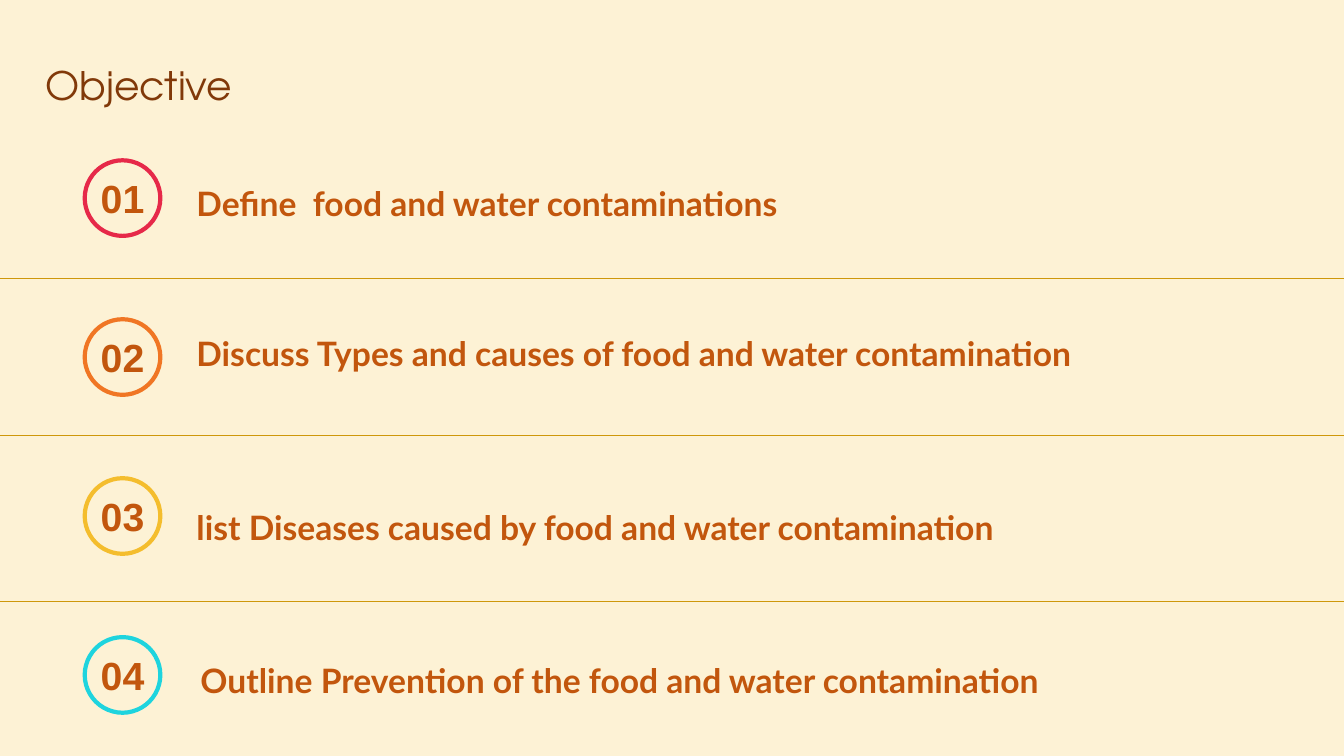
from pptx import Presentation
from pptx.dml.color import RGBColor
from pptx.enum.shapes import MSO_CONNECTOR, MSO_SHAPE
from pptx.enum.text import MSO_ANCHOR, PP_ALIGN
from pptx.oxml.ns import qn
from pptx.util import Inches, Pt
from lxml import etree

OVAL = MSO_SHAPE.OVAL
STRAIGHT = MSO_CONNECTOR.STRAIGHT
MIDDLE = MSO_ANCHOR.MIDDLE
LEFT, CENTER = PP_ALIGN.LEFT, PP_ALIGN.CENTER

# Content
TITLE = "Objective"
# Objective, ring colour, text left, text top, text width
OBJECTIVES = [
    ("Define  food and water contaminations", "E62949", 1.85, 1.77, 6.1),
    ("Discuss Types and causes of food and water contamination", "F07624", 1.85, 3.25, 9.52),
    ("list Diseases caused by food and water contamination", "F4BD2D", 1.85, 4.98, 8.31),
    ("Outline Prevention of the food and water contamination", "1ED4DE", 1.89, 6.5, 9.16),
]
DIVIDERS = [2.76, 4.32, 5.97]

BACKGROUND, TITLE_BROWN, TEXT_ORANGE, DIVIDER_GOLD = "FDF2D5", "813909", "C2560D", "CE980B"
SLIDE_W, SLIDE_H = 13.33, 7.5
RING_LEFT, RING_TOP, RING_SIZE, RING_STEP = 0.84, 1.59, 0.75, 1.577
TEXT_H = 0.5


def color(hex_string):
    return RGBColor.from_string(hex_string)


def write(shape, text, font="Lato", size=24, fill=TEXT_ORANGE, bold=True,
          align=LEFT, anchor=None, wrap=True, inset=None):
    tf = shape.text_frame
    tf.word_wrap = wrap
    if anchor is not None:
        tf.vertical_anchor = anchor
    if inset is not None:
        tf.margin_left = tf.margin_right = tf.margin_top = tf.margin_bottom = Inches(inset)
    p = tf.paragraphs[0]
    p.alignment = align
    r = p.add_run()
    r.text = text
    r.font.name, r.font.size, r.font.bold = font, Pt(size), bold
    r.font.color.rgb = color(fill)


prs = Presentation()
prs.slide_width, prs.slide_height = Inches(SLIDE_W), Inches(SLIDE_H)
s = prs.slides.add_slide(prs.slide_layouts[5])
s.background.fill.solid()
s.background.fill.fore_color.rgb = color(BACKGROUND)

# Title
title = s.shapes.title
title.left, title.top = Inches(0.35), Inches(0.45)
title.width, title.height = Inches(12.66), Inches(0.79)
write(title, TITLE, font="TeX Gyre Adventor", size=28, fill=TITLE_BROWN, bold=False, anchor=MIDDLE)

# Numbered rings with their objectives
for i, (objective, ring_color, left, top, width) in enumerate(OBJECTIVES):
    ring = s.shapes.add_shape(OVAL, Inches(RING_LEFT), Inches(RING_TOP + i * RING_STEP),
                              Inches(RING_SIZE), Inches(RING_SIZE))
    ring.shadow.inherit = False
    ring.fill.background()
    ring.line.color.rgb = color(ring_color)
    ring.line.width = Pt(3)
    write(ring, f"{i + 1:02d}", font="Arial", size=28, align=CENTER,
          anchor=MIDDLE, wrap=False, inset=0)
    box = s.shapes.add_textbox(Inches(left), Inches(top), Inches(width), Inches(TEXT_H))
    write(box, objective)

# Dividers across the full width
for y in DIVIDERS:
    line = s.shapes.add_connector(STRAIGHT, 0, Inches(y), Inches(SLIDE_W), Inches(y))
    line.line.color.rgb = color(DIVIDER_GOLD)
    line.line.width = Pt(0.5)
    etree.SubElement(line.element.spPr, qn("a:effectLst"))

prs.save("out.pptx")
